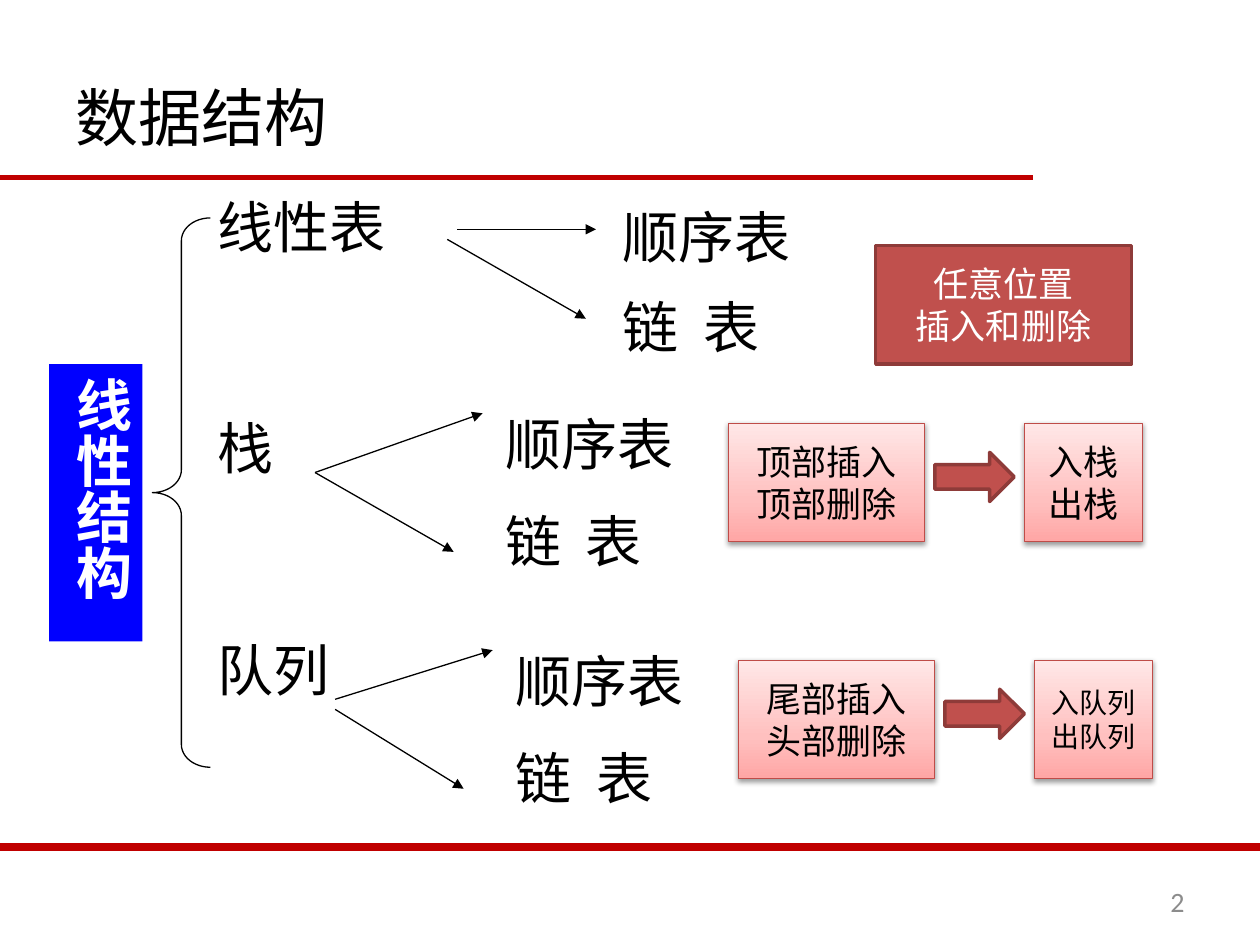
from dataclasses import dataclass

from lxml.etree import SubElement
from pptx import Presentation
from pptx.dml.color import RGBColor
from pptx.enum.shapes import MSO_CONNECTOR, MSO_SHAPE
from pptx.enum.text import MSO_ANCHOR, PP_ALIGN
from pptx.oxml.ns import qn
from pptx.util import Inches, Pt


@dataclass(frozen=True)
class Theme:
    font: str = "Noto Sans CJK SC"
    display_font: str = "Comic Neue"
    number_font: str = "Calibri"
    black: str = "000000"
    white: str = "FFFFFF"
    grey: str = "8C8C8C"
    rule: str = "C00000"
    blue: str = "0000FF"
    red: str = "C0504D"
    dark_red: str = "8E3B39"
    pink_line: str = "BF4C48"
    pink_stops: tuple = ((0, "FFA6A5"), (35, "FFC0BF"), (100, "FFE7E7"))
    title: int = 36
    body: int = 32
    box: int = 20
    small: int = 16


THEME = Theme()


def rgb(value):
    return RGBColor.from_string(value)


def add_run(p, text, size, color=THEME.black, font=THEME.font, bold=False):
    r = p.add_run()
    r.text = text
    r.font.size = Pt(size)
    r.font.bold = bold
    r.font.name = font
    r.font.color.rgb = rgb(color)
    SubElement(r._r.get_or_add_rPr(), qn("a:ea"), typeface=font)
    return r


def write_paragraphs(tf, paragraphs, size, align=PP_ALIGN.LEFT, **style):
    """Write each string as a paragraph, with a line break at each newline."""
    for i, text in enumerate(paragraphs):
        p = tf.paragraphs[0] if i == 0 else tf.add_paragraph()
        p.alignment = align
        for j, line in enumerate(text.split("\n")):
            if j:
                p.add_line_break()
            add_run(p, line, size, **style)


def add_line(s, start, end, color=THEME.black, width=0.75, arrow=False):
    ends = [Inches(v) for v in (*start, *end)]
    line = s.shapes.add_connector(MSO_CONNECTOR.STRAIGHT, *ends)
    line.line.color.rgb = rgb(color)
    line.line.width = Pt(width)
    if arrow:
        SubElement(line.line._get_or_add_ln(), qn("a:tailEnd"), type="triangle")
    SubElement(line._element.spPr, qn("a:effectLst"))


def add_fork(s, starts, ends):
    for start, end in zip(starts, ends):
        add_line(s, start, end, arrow=True)


def add_shape(s, kind, box, fill=None, line=None, width=0.75):
    sp = s.shapes.add_shape(kind, *[Inches(v) for v in box])
    sp.shadow.inherit = False
    if fill:
        sp.fill.solid()
        sp.fill.fore_color.rgb = rgb(fill)
    else:
        sp.fill.background()
    if line:
        sp.line.color.rgb = rgb(line)
        sp.line.width = Pt(width)
    else:
        sp.line.fill.background()
    return sp


def add_text_box(s, box, wrap=True):
    tf = s.shapes.add_textbox(*[Inches(v) for v in box]).text_frame
    tf.word_wrap = wrap
    return tf


def add_storage_labels(s, left, tops):
    """Name the sequential and the linked storage form."""
    for parts, top in zip((("顺序表",), ("链", " ", "表")), tops):
        p = add_text_box(s, (left, top, 1.55, 0.64), wrap=False).paragraphs[0]
        for part in parts:
            r = add_run(p, part, THEME.body)
            if part == " ":
                r._r.get_or_add_rPr().set("spc", "700")


def add_pink_box(s, box, paragraphs, size=THEME.box):
    sp = add_shape(s, MSO_SHAPE.RECTANGLE, box, THEME.white, THEME.pink_line)
    sp.fill.gradient()
    sp.fill.gradient_angle = 90
    sp_pr = sp._element.spPr
    stops = sp_pr.find(qn("a:gradFill")).find(qn("a:gsLst"))
    stops.clear()
    for percent, color in THEME.pink_stops:
        stop = SubElement(stops, qn("a:gs"), pos=str(percent * 1000))
        SubElement(stop, qn("a:srgbClr"), val=color)
    shadow = SubElement(
        sp_pr.find(qn("a:effectLst")), qn("a:outerShdw"), blurRad=str(Pt(3.1)),
        dist=str(Pt(1.6)), dir="5400000", rotWithShape="0")
    shadow_color = SubElement(shadow, qn("a:srgbClr"), val=THEME.black)
    SubElement(shadow_color, qn("a:alpha"), val="38000")
    tf = sp.text_frame
    tf.vertical_anchor = MSO_ANCHOR.MIDDLE
    write_paragraphs(tf, paragraphs, size, PP_ALIGN.CENTER)


def add_restricted_row(s, starts, rule, operations, size, dx=0.0, dy=0.0):
    """Draw the storage forms, access rule and operations of a stack or queue."""
    add_fork(s, starts, ((3.83 + dx, 3.28 + dy), (3.6 + dx, 4.38 + dy)))
    add_storage_labels(s, 3.91 + dx, (3.2 + dy, 3.97 + dy))
    add_pink_box(s, (5.78 + dx, 3.36 + dy, 1.56, 0.94), [rule])
    add_pink_box(s, (8.13 + dx, 3.36 + dy, 0.94, 0.94), operations, size)
    add_shape(s, MSO_SHAPE.RIGHT_ARROW, (7.42 + dx, 3.59 + dy, 0.63, 0.39),
              THEME.red, THEME.dark_red, 2)


def add_title(s, text):
    title = s.shapes.title
    title.left, title.top = Inches(0.5), Inches(0.3)
    title.width, title.height = Inches(9), Inches(1.25)
    title.text_frame.vertical_anchor = MSO_ANCHOR.MIDDLE
    write_paragraphs(title.text_frame, [text], THEME.title)


def add_root(s):
    """Draw the vertical root label, its brace and the three structures."""
    root = add_shape(s, MSO_SHAPE.RECTANGLE, (0.39, 2.89, 0.74, 2.2), THEME.blue)
    tf = root.text_frame
    tf.vertical_anchor = MSO_ANCHOR.TOP
    tf.margin_top = Inches(0.1)
    tf.margin_left = tf.margin_right = Inches(0.05)
    tf._txBody.bodyPr.set("vert", "eaVert")
    write_paragraphs(tf, ["线性结构"], THEME.body, color=THEME.white,
                     font=THEME.display_font, bold=True)

    brace = add_shape(s, MSO_SHAPE.LEFT_BRACE, (1.21, 1.73, 0.46, 4.36),
                      line=THEME.black)
    brace.adjustments[0] = 0.394

    tf = add_text_box(s, (1.63, 1.48, 3.12, 4.52))
    write_paragraphs(tf, ["线性表", "栈", "队列"], THEME.body)
    for p in tf.paragraphs[1:]:
        p.space_before = Pt(88)


def add_linear_list_row(s):
    add_fork(s, ((3.63, 1.82), (3.55, 1.9)), ((4.73, 1.82), (4.65, 2.53)))
    add_storage_labels(s, 4.84, (1.56, 2.27))
    sp = add_shape(s, MSO_SHAPE.RECTANGLE, (6.95, 1.95, 2.03, 0.94),
                   THEME.red, THEME.dark_red, 2)
    sp.text_frame.vertical_anchor = MSO_ANCHOR.MIDDLE
    write_paragraphs(sp.text_frame, ["任意位置\n插入和删除"], THEME.box,
                     PP_ALIGN.CENTER, color=THEME.white)


def add_page_number(s, number):
    tf = add_text_box(s, (7.17, 6.95, 2.33, 0.4))
    tf.vertical_anchor = MSO_ANCHOR.MIDDLE
    write_paragraphs(tf, [number], THEME.small, PP_ALIGN.RIGHT,
                     color=THEME.grey, font=THEME.number_font)


def main():
    prs = Presentation()
    prs.slide_width, prs.slide_height = Inches(10), Inches(7.5)
    s = prs.slides.add_slide(prs.slide_layouts[5])
    add_line(s, (0, 1.41), (8.2, 1.41), THEME.rule, 3)
    add_line(s, (0, 6.72), (10, 6.72), THEME.rule, 4.5)
    add_title(s, "数据结构")
    add_root(s)
    add_linear_list_row(s)
    add_restricted_row(s, ((2.5, 3.75), (2.5, 3.75)), "顶部插入\n顶部删除",
                       ["入栈", "出栈"], THEME.box)
    add_restricted_row(s, ((2.66, 5.55), (2.66, 5.63)), "尾部插入\n头部删除",
                       ["入队列", "出队列"], THEME.small, dx=0.08, dy=1.88)
    add_page_number(s, "2")
    prs.save("out.pptx")


if __name__ == "__main__":
    main()
